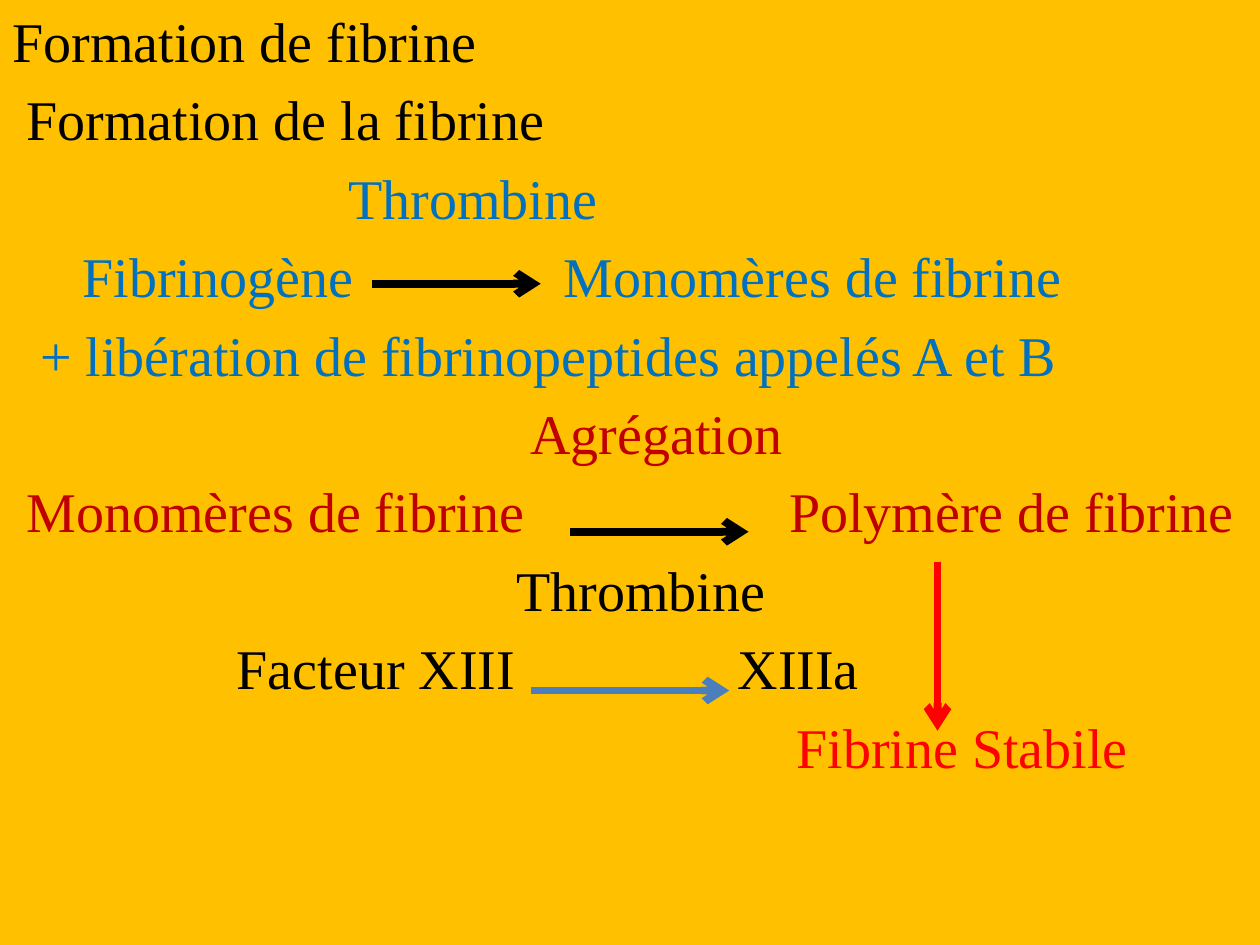
from pptx import Presentation
from pptx.dml.color import RGBColor
from pptx.enum.shapes import MSO_CONNECTOR
from pptx.enum.text import MSO_AUTO_SIZE, MSO_ANCHOR
from pptx.oxml.ns import qn
from pptx.util import Cm, Pt
from lxml.etree import SubElement

THEME = {
    "font": "Times New Roman",
    "text_size": Pt(32),
    "line_width": Pt(4.5),
    "background": "FFC000",
    "black": "000000",
    "blue": "0070C0",
    "dark red": "C00000",
    "red": "FF0000",
    "steel": "4B7EBC",
}
WIDTH, HEIGHT = Cm(25.4), Cm(19.05)
LINE_PITCH = Cm(1.58)

# colour, indent in cm, wording
LINES = [
    ("black", 0, "Formation de fibrine"),
    ("black", 0.28, "Formation de la fibrine"),
    ("blue", 6.77, "Thrombine"),
    ("blue", 1.41, "Fibrinogène"),
    ("blue", 0.56, "+ libération de fibrinopeptides appelés A et B"),
    ("dark red", 10.44, "Agrégation"),
    ("dark red", 0.28, "Monomères de fibrine"),
    ("black", 10.16, "Thrombine"),
    ("black", 4.52, "Facteur XIII"),
    ("red", 15.8, "Fibrine Stabile"),
]

# index of the line it ends, colour, left in cm, wording
PRODUCTS = [
    (3, "blue", 11.11, "Monomères de fibrine"),
    (6, "dark red", 15.66, "Polymère de fibrine"),
    (8, "black", 14.62, "XIIIa"),
]

# colour, start and end in cm
ARROWS = [
    ("black", (7.49, 5.72), (10.9, 5.72)),
    ("black", (11.5, 10.72), (15.09, 10.72)),
    ("red", (18.9, 11.33), (18.9, 14.73)),
    ("steel", (10.7, 13.92), (14.7, 13.92)),
]


def colour(name):
    return RGBColor.from_string(THEME[name])


def set_format(target, values):
    for name, value in values.items():
        setattr(target, name, value)


def write_lines(frame, lines):
    set_format(frame, {"word_wrap": True, "auto_size": MSO_AUTO_SIZE.NONE,
                       "vertical_anchor": MSO_ANCHOR.TOP})
    for index, (name, indent, words) in enumerate(lines):
        paragraph = frame.add_paragraph() if index else frame.paragraphs[0]
        properties = paragraph._p.get_or_add_pPr()
        properties.set("marL", str(Cm(indent)))
        properties.set("indent", "0")
        space = SubElement(properties, qn("a:spcBef"))
        SubElement(space, qn("a:spcPct"), val="20000")
        SubElement(properties, qn("a:buNone"))
        run = paragraph.add_run()
        run.text = words
        set_format(run.font, {"name": THEME["font"], "size": THEME["text_size"]})
        run.font.color.rgb = colour(name)


def fill_body(body):
    set_format(body, {"left": 0, "top": 0, "width": WIDTH, "height": HEIGHT})
    body.fill.solid()
    body.fill.fore_color.rgb = colour("background")
    write_lines(body.text_frame, LINES)


def add_product(slide, line, name, left, words):
    """Put a reaction product at the right of its line of the body."""
    box = slide.shapes.add_textbox(Cm(left), line * LINE_PITCH,
                                   WIDTH - Cm(left), LINE_PITCH)
    write_lines(box.text_frame, [(name, 0, words)])


def add_arrow(slide, name, start, end):
    ends = [Cm(value) for value in start + end]
    arrow = slide.shapes.add_connector(MSO_CONNECTOR.STRAIGHT, *ends)
    arrow.line.width = THEME["line_width"]
    arrow.line.color.rgb = colour(name)
    SubElement(arrow.line._get_or_add_ln(), qn("a:tailEnd"), type="arrow")
    SubElement(arrow._element.spPr, qn("a:effectLst"))


def main():
    presentation = Presentation()
    set_format(presentation, {"slide_width": WIDTH, "slide_height": HEIGHT})
    slide = presentation.slides.add_slide(presentation.slide_layouts[1])
    title = slide.shapes.title._element
    title.getparent().remove(title)
    fill_body(slide.placeholders[1])
    for product in PRODUCTS:
        add_product(slide, *product)
    for arrow in ARROWS:
        add_arrow(slide, *arrow)
    presentation.save("out.pptx")


if __name__ == "__main__":
    main()
